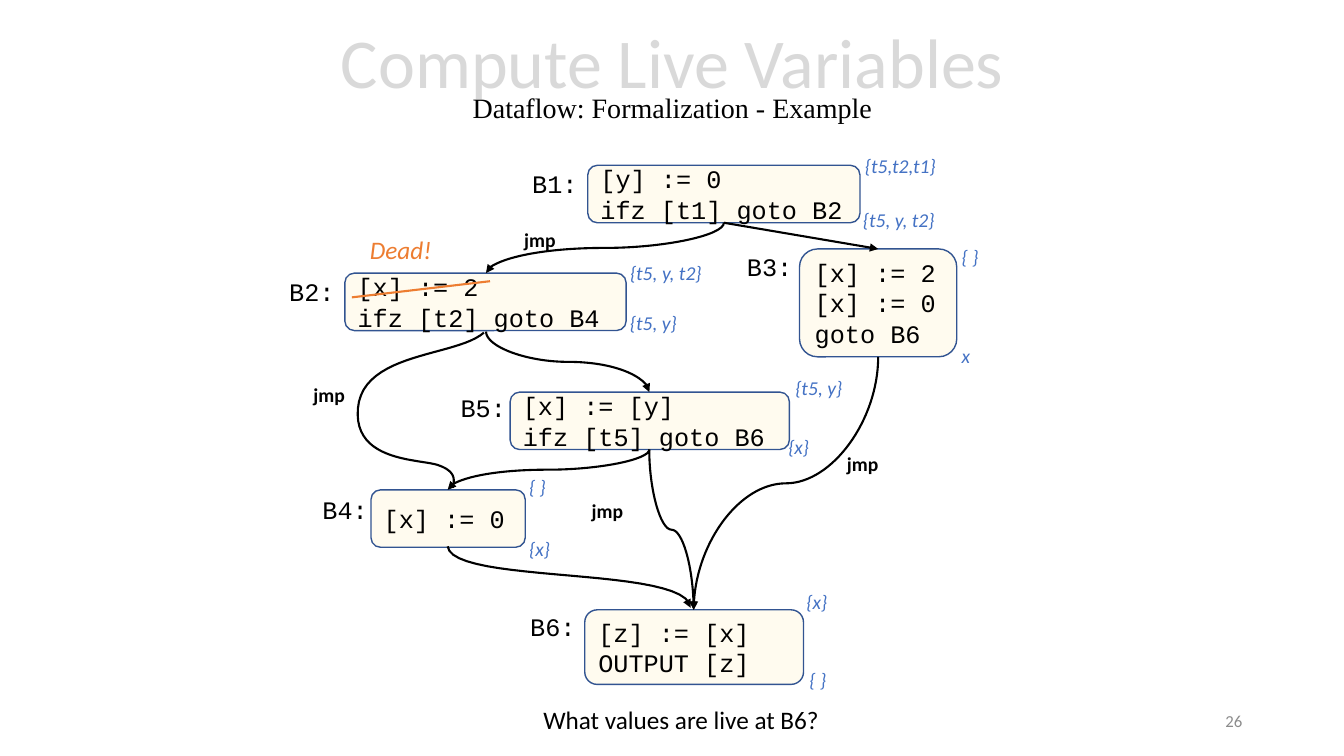
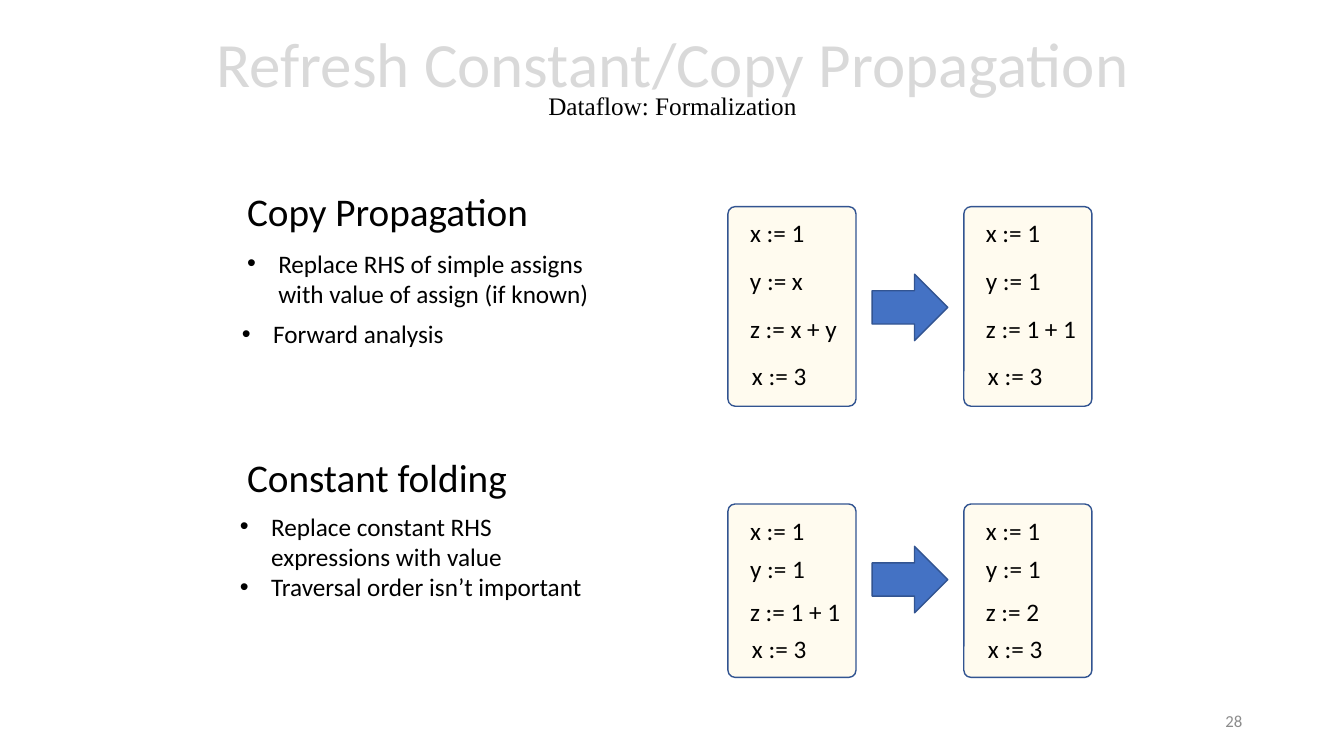
from lxml import etree
from pptx import Presentation
from pptx.dml import color
from pptx.enum import shapes, text
from pptx.oxml import ns
from pptx.util import Emu, Pt

PX = 9144
COLORS = {
    "ink": "000000",
    "title": "D9D9D9",
    "number": "8C8C8C",
    "cream": "FFF2CC",
    "outline": "325491",
    "blue": "4472C4",
    "orange": "ED7D31",
}
SANS, MONO, SERIF = "Calibri", "Courier New", "Times New Roman"
SHAPE = shapes.MSO_SHAPE
CONNECTOR = shapes.MSO_CONNECTOR
ALIGN = text.PP_ALIGN
ANCHOR = text.MSO_ANCHOR


def px(*lengths):
    return [Emu(round(length * PX)) for length in lengths]


def rgb(name):
    return color.RGBColor.from_string(COLORS[name])


def child(parent, tag, **attributes):
    return etree.SubElement(parent, ns.qn(tag), **attributes)


def bezier(start, first, second, end, steps=24):
    for step in range(1, steps + 1):
        t = step / steps
        weights = ((1 - t) ** 3, 3 * t * (1 - t) ** 2, 3 * t * t * (1 - t), t ** 3)
        yield tuple(
            sum(weight * point[axis] for weight, point in zip(weights, (start, first, second, end)))
            for axis in (0, 1)
        )


class Deck:
    def __init__(self):
        self.deck = Presentation()
        self.deck.slide_width, self.deck.slide_height = px(1333, 750)
        self.page = None

    def new_page(self, layout, title, subtitle, sizes, number):
        self.page = self.deck.slides.add_slide(self.deck.slide_layouts[layout])
        box = self.page.shapes.title
        self.place(box, 167, 9, 1000, 145)
        frame = box.text_frame
        frame.text = f"{title}\v{subtitle}"
        frame.vertical_anchor = ANCHOR.MIDDLE
        para = frame.paragraphs[0]
        para.alignment = ALIGN.CENTER
        para.line_spacing = 0.7
        looks = ((SANS, "title"), (SERIF, "ink"))
        for span, size, (font, ink) in zip(para.runs, sizes, looks):
            self.format_span(span, size, font, ink)
        box = self.label(number, 942, 695, 300, 40, size=12, ink="number")
        box.text_frame.vertical_anchor = ANCHOR.MIDDLE
        box.text_frame.paragraphs[0].alignment = ALIGN.RIGHT

    def place(self, box, left, top, width, height):
        box.left, box.top, box.width, box.height = px(left, top, width, height)
        box.text_frame.auto_size = text.MSO_AUTO_SIZE.NONE

    def format_span(self, span, size, font, ink, bold=False, italic=False):
        span.font.size = Pt(size)
        span.font.name = font
        span.font.color.rgb = rgb(ink)
        span.font.bold = bold
        span.font.italic = italic

    def fill_text(self, frame, words, size=18, font=SANS, ink="ink", **emphasis):
        frame.text = words
        for para in frame.paragraphs:
            para.alignment = ALIGN.LEFT
            for span in para.runs:
                self.format_span(span, size, font, ink, **emphasis)

    def label(self, words, left, top, width, height=40, **style):
        box = self.page.shapes.add_textbox(*px(left, top, width, height))
        box.text_frame.word_wrap = False
        self.fill_text(box.text_frame, words, **style)
        return box

    def heading(self, index, words, left, top):
        box = self.page.placeholders[index]
        self.place(box, left, top, 638, 58)
        self.fill_text(box.text_frame, words, size=28)
        box.text_frame.vertical_anchor = ANCHOR.TOP
        para = box.text_frame.paragraphs[0]
        para.line_spacing = 0.9
        para.space_before = Pt(10)

    def bullets(self, index, items, left, top, width, height):
        box = self.page.placeholders[index]
        self.place(box, left, top, width, height)
        self.fill_text(box.text_frame, "\n".join(words for words, _, _ in items))
        for para, (_, margin, gap) in zip(box.text_frame.paragraphs, items):
            para.space_before = Pt(gap)
            para.line_spacing = 1.0
            settings = para._p.get_or_add_pPr()
            settings.set("marL", str(margin * PX))
            settings.set("indent", str(-31 * PX))
            child(settings, "a:buFont", typeface="Arial")
            child(settings, "a:buChar", char="•")

    def shape(self, kind, left, top, width, height, fill, alpha=None):
        box = self.page.shapes.add_shape(kind, *px(left, top, width, height))
        box.shadow.inherit = False
        box.fill.solid()
        box.fill.fore_color.rgb = rgb(fill)
        if alpha:
            tint = box.element.spPr.find(ns.qn("a:solidFill"))[0]
            child(tint, "a:alpha", val=str(alpha * 1000))
        box.line.color.rgb = rgb("outline")
        box.line.width = Pt(1)
        return box

    def card(self, left, top, width, height, corner=None):
        box = self.shape(SHAPE.ROUNDED_RECTANGLE, left, top, width, height, "cream", alpha=30)
        if corner:
            box.adjustments[0] = corner
        return box

    def code(self, words, *bounds):
        frame = self.card(*bounds).text_frame
        frame.word_wrap = True
        frame.vertical_anchor = ANCHOR.MIDDLE
        self.fill_text(frame, words, font=MONO)

    def stroke(self, line, ink, arrow):
        line.line.color.rgb = rgb(ink)
        line.line.width = Pt(1.5)
        if arrow:
            child(line.element.spPr.find(ns.qn("a:ln")), "a:tailEnd", type="triangle")

    def connector(self, kind, start, end, ink="ink", arrow=True):
        line = self.page.shapes.add_connector(kind, *px(*start, *end))
        self.stroke(line, ink, arrow)
        child(line.element.spPr, "a:effectLst")
        return line

    def falling_curve(self, start, end):
        (x1, y1), (x2, y2) = start, end
        middle_x, middle_y = (x1 + x2) / 2, (y1 + y2) / 2
        reach = (y2 - y1) / 2 * (1 if x2 < x1 else -1)
        rise = abs(x2 - x1) / 2
        line = self.connector(
            CONNECTOR.CURVE,
            (middle_x - reach, middle_y - rise),
            (middle_x + reach, middle_y + rise),
        )
        line.rotation = 90 if x2 < x1 else 270

    def free_curve(self, start, pieces, arrow):
        points, current = [], start
        for piece in pieces:
            points.extend(bezier(current, *piece))
            current = piece[-1]
        outline = self.page.shapes.build_freeform(*px(*start))
        outline.add_line_segments([px(*point) for point in points], close=False)
        curve = outline.convert_to_shape()
        curve.shadow.inherit = False
        curve.fill.background()
        self.stroke(curve, "ink", arrow)


def live_variables(deck):
    deck.new_page(5, "Compute Live Variables", "Dataflow: Formalization - Example", (50, 20), "26")
    blocks = (
        ("B2:", 277, 269, "[x] := 2\nifz [t2] goto B4", (342, 271, 279, 57)),
        ("B4:", 310, 485, "[x] := 0", (368, 486, 153, 57)),
        ("B5:", 447, 384, "[x] := [y]\nifz [t5] goto B6", (506, 389, 277, 57)),
        ("B3:", 731, 244, "[x] := 2\n[x] := 0 goto B6", (793, 247, 156, 107)),
        ("B1:", 518, 162, "[y] := 0\nifz [t1] goto B2", (583, 164, 270, 57)),
        ("B6:", 516, 602, "[z] := [x]\nOUTPUT [z]", (580, 605, 217, 74)),
    )
    for name, left, top, words, bounds in blocks:
        deck.code(words, *bounds)
        deck.label(name, left, top, 65, font=MONO)

    for start, end in (
        ((718, 221), (482, 271)),
        ((482, 329), (644, 389)),
        ((871, 354), (688, 605)),
        ((644, 446), (688, 605)),
        ((644, 446), (444, 486)),
    ):
        deck.falling_curve(start, end)
    deck.connector(CONNECTOR.STRAIGHT, (718, 221), (871, 247))
    deck.free_curve(
        (480, 330),
        (
            ((453, 354), (360, 349), (355, 405)),
            ((350, 460), (420, 455), (436, 462)),
            ((452, 468), (451, 476), (449, 484)),
        ),
        arrow=False,
    )
    deck.free_curve((444, 542), (((448, 580), (682, 561), (685, 603)),), arrow=True)

    for left, top in ((510, 221), (301, 375), (577, 490), (830, 443)):
        deck.label("jmp", left, top, 52, 34, size=14, bold=True)

    live_sets = (
        ("{ }", 37, ((793, 658), (515, 466), (944, 238))),
        ("{x}", 41, ((790, 580), (515, 528), (772, 427))),
        ("x", 29, ((944, 336),)),
        ("{t5, y}", 67, ((779, 368), (615, 304))),
        ("{t5, y, t2}", 92, ((846, 201), (615, 254))),
        ("{t5,t2,t1}", 91, ((848, 148),)),
    )
    for words, width, places in live_sets:
        for left, top in places:
            deck.label(words, left, top, width, 34, size=14, ink="blue", italic=True)

    deck.connector(CONNECTOR.STRAIGHT, (349, 295), (486, 279), ink="orange", arrow=False)
    deck.label("Dead!", 357, 228, 82, ink="orange", italic=True)
    deck.label("What values are live at B6?", 529, 694, 297)


def propagation(deck):
    deck.new_page(4, "Refresh Constant/Copy Propagation", "Dataflow: Formalization", (45, 18), "28")
    deck.heading(1, "Copy Propagation", 235, 186)
    deck.bullets(
        2,
        (
            ("Replace RHS of simple assigns with value of assign (if known)", 36, 0),
            ("Forward analysis", 31, 7),
        ),
        230, 241, 382, 110,
    )
    deck.heading(3, "Constant folding", 235, 450)
    deck.bullets(
        4,
        (
            ("Replace constant RHS expressions with value", 31, 0),
            ("Traversal order isn’t important", 31, 0),
        ),
        228, 502, 377, 101,
    )
    widths = {"y := x": 73, "z := x + y": 108, "z := 1 + 1": 111, "z := 2": 74}
    examples = (
        (205, 198, 272, (211, 258, 306, 353), (("y := x", "z := x + y"), ("y := 1", "z := 1 + 1"))),
        (500, 172, 542, (506, 544, 587, 623), (("y := 1", "z := 1 + 1"), ("y := 1", "z := 2"))),
    )
    for top, height, arrow_top, rows, programs in examples:
        for left, changing in zip((722, 956), programs):
            deck.card(left, top, 127, height, corner=0.056)
            lines = ("x := 1", *changing, "x := 3")
            for words, row, inset in zip(lines, rows, (12, 12, 12, 14)):
                deck.label(words, left + inset, row, widths.get(words, 75))
        deck.shape(SHAPE.RIGHT_ARROW, 865, arrow_top, 75, 66, "blue")


def main():
    deck = Deck()
    live_variables(deck)
    propagation(deck)
    deck.deck.save("out.pptx")


if __name__ == "__main__":
    main()
